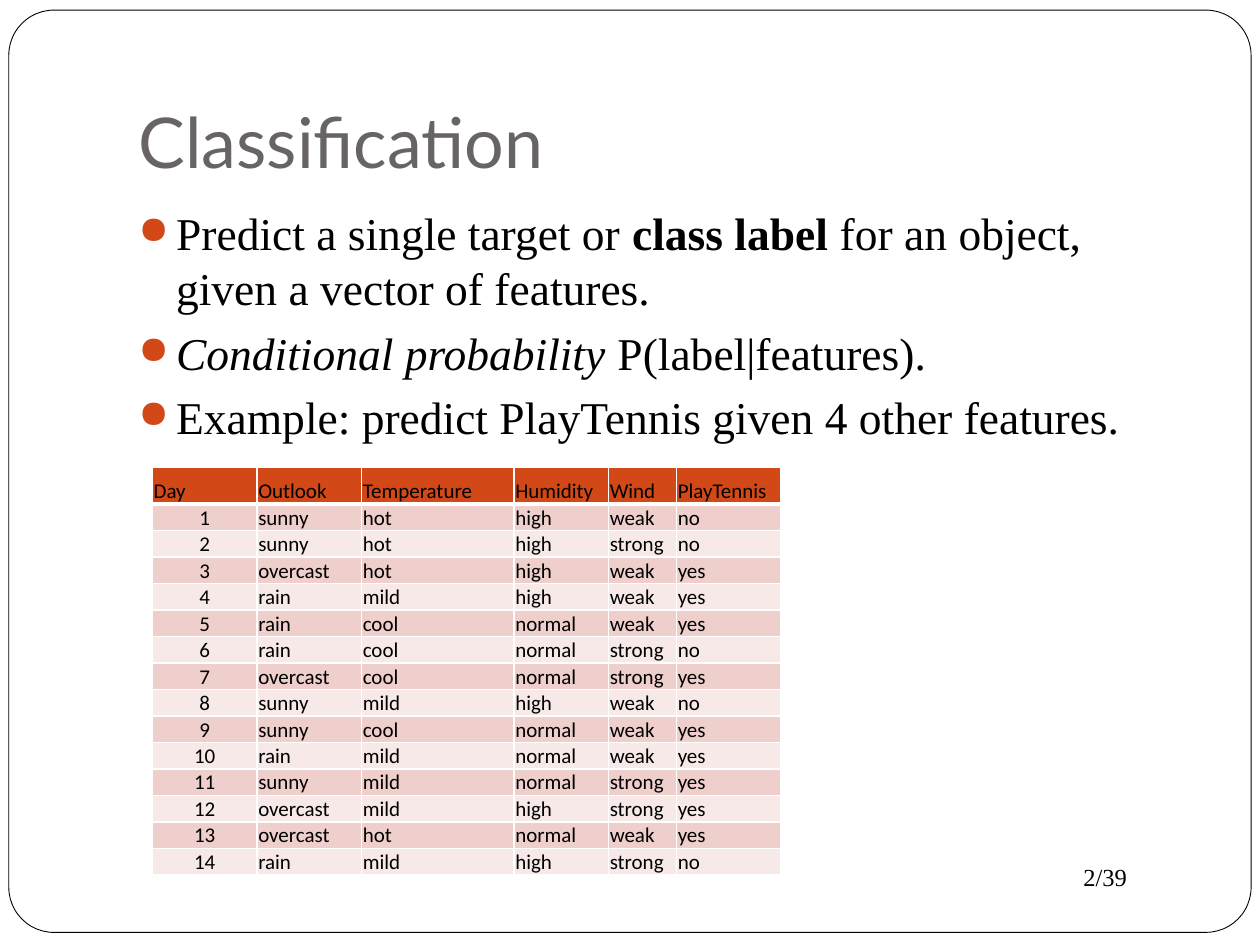
from dataclasses import dataclass

from pptx import Presentation
from pptx import util as u
from pptx.dml.color import RGBColor
from pptx.enum import shapes, text
from pptx.oxml import parse_xml
from pptx.oxml.ns import nsdecls


@dataclass(frozen=True)
class Theme:
    white: str = "FFFFFF"
    ink: str = "000000"
    title: str = "696464"
    accent: str = "D34817"
    band_dark: str = "EFCFCC"
    band_light: str = "F7E9E8"
    title_font: str = "Lato"
    body_font: str = "Times New Roman"
    table_font: str = "Calibri"
    title_size: float = 40
    body_size: float = 26
    page_size: float = 14
    table_size: float = 12


@dataclass(frozen=True)
class Span:
    words: str
    bold: bool = False
    italic: bool = False


T = Theme()

BULLETS = [
    [Span("Predict a single target or "), Span("class label ", bold=True),
     Span("for an object, given a vector of features.")],
    [Span("Conditional probability ", italic=True), Span("P(label|features).")],
    [Span("Example: predict PlayTennis given 4 other features.")],
]

HEADER = ["Day", "Outlook", "Temperature", "Humidity", "Wind", "PlayTennis"]
DAYS = """sunny hot high weak no
sunny hot high strong no
overcast hot high weak yes
rain mild high weak yes
rain cool normal weak yes
rain cool normal strong no
overcast cool normal strong yes
sunny mild high weak no
sunny cool normal weak yes
rain mild normal weak yes
sunny mild normal strong yes
overcast mild high strong yes
overcast hot normal weak yes
rain mild high strong no""".splitlines()
COL_WIDTHS = [0.83, 0.83, 1.21, 0.75, 0.54, 0.83]
HEADER_HEIGHT, ROW_HEIGHT = 0.29, 0.17


def style(font, name: str, size: float, color: str) -> None:
    font.name, font.size = name, u.Pt(size)
    font.color.rgb = RGBColor.from_string(color)


def place(sp, left: float, top: float, width: float, height: float) -> None:
    sp.left, sp.top = u.Inches(left), u.Inches(top)
    sp.width, sp.height = u.Inches(width), u.Inches(height)


def text_box(s, *box: float):
    sp = s.shapes.add_textbox(*(u.Inches(v) for v in box))
    sp.text_frame.word_wrap = True
    return sp.text_frame


def add_bullet(p, spans: list[Span]) -> None:
    pPr = p._p.get_or_add_pPr()
    pPr.set("marL", str(u.Inches(0.3)))
    pPr.set("indent", str(-u.Inches(0.3)))
    for xml in (f'<a:buClr {nsdecls("a")}><a:srgbClr val="{T.accent}"/></a:buClr>',
                f'<a:buSzPct {nsdecls("a")} val="85000"/>',
                f'<a:buChar {nsdecls("a")} char="●"/>'):
        pPr.append(parse_xml(xml))
    for span in spans:
        r = p.add_run()
        r.text = span.words
        style(r.font, T.body_font, T.body_size, T.ink)
        r.font.bold, r.font.italic = span.bold, span.italic


def set_borders(cell, bottom: float) -> None:
    tcPr = cell._tc.get_or_add_tcPr()
    widths = {"lnL": 1, "lnR": 1, "lnT": 1, "lnB": bottom}
    for i, (side, width) in enumerate(widths.items()):
        tcPr.insert(i, parse_xml(
            f'<a:{side} {nsdecls("a")} w="{u.Pt(width)}"><a:solidFill>'
            f'<a:srgbClr val="{T.white}"/></a:solidFill></a:{side}>'))


def fill_cell(cell, words: str, fill: str, centred: bool, bottom: float) -> None:
    cell.margin_left = cell.margin_right = cell.margin_top = u.Inches(0.01)
    cell.margin_bottom = 0
    cell.vertical_anchor = text.MSO_ANCHOR.BOTTOM
    cell.fill.solid()
    cell.fill.fore_color.rgb = RGBColor.from_string(fill)
    set_borders(cell, bottom)
    p = cell.text_frame.paragraphs[0]
    p.text = words
    p.alignment = text.PP_ALIGN.CENTER if centred else text.PP_ALIGN.LEFT
    r = p.runs[0]
    style(r.font, T.table_font, T.table_size, T.ink)
    r.font.bold = False


def add_day_table(s) -> None:
    rows = [HEADER] + [[str(n), *day.split()] for n, day in enumerate(DAYS, 1)]
    frame = s.shapes.add_table(len(rows), len(HEADER), u.Inches(1.21), u.Inches(3.71),
                               u.Inches(5), u.Inches(3.29))
    table = frame.table
    for col, width in zip(table.columns, COL_WIDTHS):
        col.width = u.Inches(width)
    for i, row in enumerate(rows):
        table.rows[i].height = u.Inches(ROW_HEIGHT if i else HEADER_HEIGHT)
        fill = (T.band_dark if i % 2 else T.band_light) if i else T.accent
        for j, words in enumerate(row):
            fill_cell(table.cell(i, j), words, fill, centred=i > 0 and j == 0,
                      bottom=1 if i else 3)
    frame.height = u.Inches(3.29)


def main() -> None:
    prs = Presentation()
    prs.slide_width, prs.slide_height = u.Inches(10), u.Inches(7.5)
    s = prs.slides.add_slide(prs.slide_layouts[5])

    # Rounded slide frame
    sp = s.shapes.add_shape(shapes.MSO_SHAPE.ROUNDED_RECTANGLE, 0, 0, 0, 0)
    place(sp, 0.07, 0.08, 9.86, 7.32)
    sp.adjustments[0] = 0.049
    sp.shadow.inherit = False
    sp.fill.solid()
    sp.fill.fore_color.rgb = RGBColor.from_string(T.white)
    sp.line.color.rgb = RGBColor.from_string(T.ink)
    sp.line.width = u.Pt(0.5)

    # Page number
    tf = text_box(s, 8.5, 6.79, 1, 0.34)
    tf.auto_size = text.MSO_AUTO_SIZE.SHAPE_TO_FIT_TEXT
    tf.text = "2/39"
    style(tf.paragraphs[0].runs[0].font, T.body_font, T.page_size, T.ink)

    # Title, raised above the frame
    title = s.shapes.title
    s.shapes._spTree.append(title._element)
    place(title, 1, 0.3, 8.5, 1.25)
    tf = title.text_frame
    tf.text = "Classification"
    tf.vertical_anchor = text.MSO_ANCHOR.BOTTOM
    tf.margin_left = tf.margin_right = tf.margin_bottom = u.Inches(0.1)
    tf.margin_top = u.Inches(0.05)
    p = tf.paragraphs[0]
    p.alignment = text.PP_ALIGN.LEFT
    style(p.runs[0].font, T.title_font, T.title_size, T.title)

    # Bulleted points
    tf = text_box(s, 1, 1.58, 8.5, 5)
    for i, spans in enumerate(BULLETS):
        p = tf.add_paragraph() if i else tf.paragraphs[0]
        p.space_before = u.Pt(5.8 if i else 0)
        add_bullet(p, spans)

    # Weather table
    add_day_table(s)

    prs.save("out.pptx")


if __name__ == "__main__":
    main()
